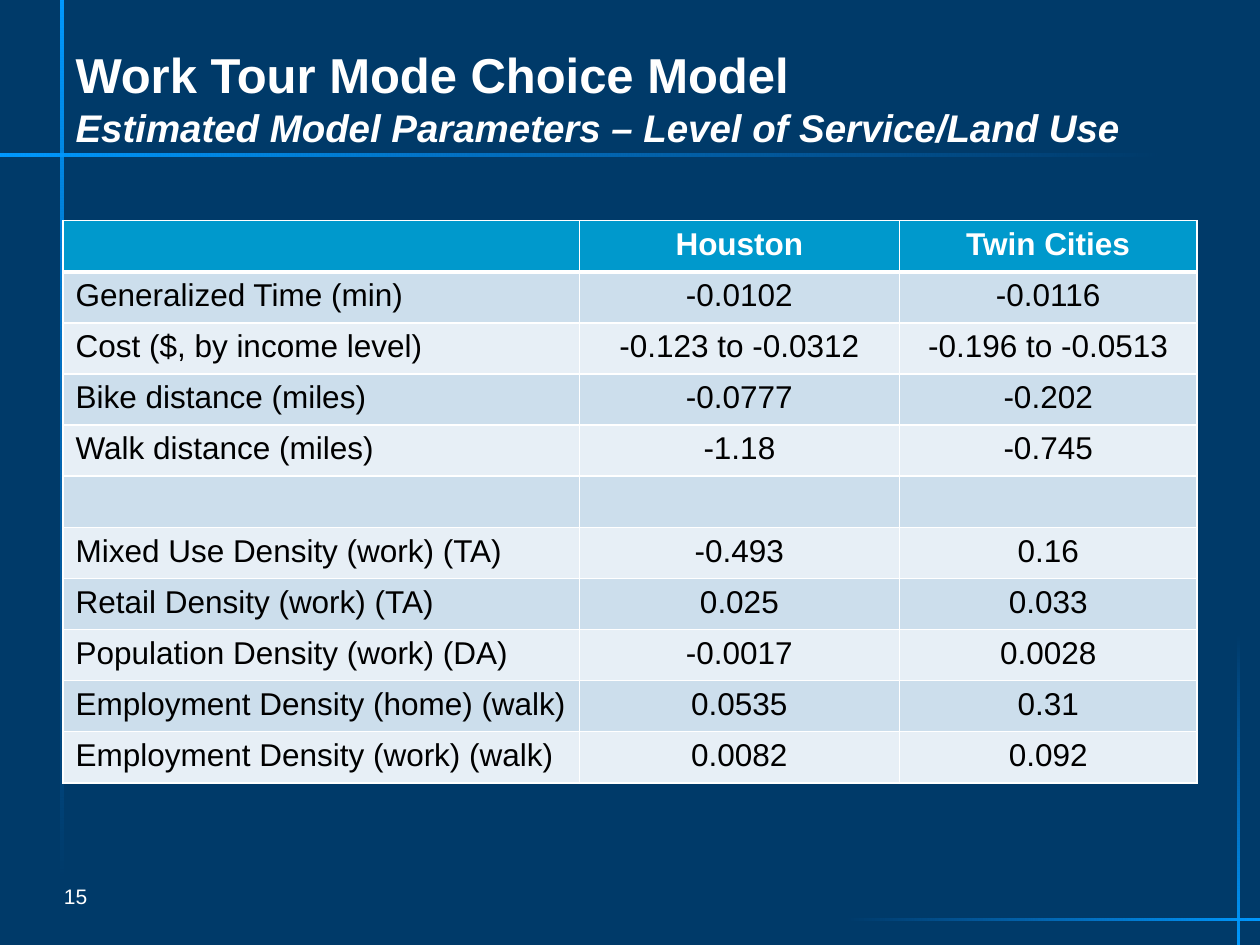
from lxml.etree import SubElement
from pptx import Presentation
from pptx.dml.color import RGBColor
from pptx.enum.shapes import MSO_SHAPE as Shape
from pptx.enum.text import MSO_ANCHOR as Anchor, MSO_AUTO_SIZE as AutoSize, PP_ALIGN as Align
from pptx.oxml import parse_xml
from pptx.oxml.ns import nsdecls, qn
from pptx.util import Cm, Pt

TITLE = "Work Tour Mode Choice Model"
SUBTITLE = "Estimated Model Parameters – Level of Service/Land Use"
PAGE = "15"
PARAMETERS = [
    ("", "Houston", "Twin Cities"),
    ("Generalized Time (min)", "-0.0102", "-0.0116"),
    ("Cost ($, by income level)", "-0.123 to -0.0312", "-0.196 to -0.0513"),
    ("Bike distance (miles)", "-0.0777", "-0.202"),
    ("Walk distance (miles)", "-1.18", "-0.745"),
    ("", "", ""),
    ("Mixed Use Density (work) (TA)", "-0.493", "0.16"),
    ("Retail Density (work) (TA)", "0.025", "0.033"),
    ("Population Density (work) (DA)", "-0.0017", "0.0028"),
    ("Employment Density (home) (walk)", "0.0535", "0.31"),
    ("Employment Density (work) (walk)", "0.0082", "0.092"),
]
COLUMN_WIDTHS = (10.41, 6.45, 6.0)
ROW_HEIGHT = 1.03
GUIDES = [
    (0, 3.09, 23.44, 0.07, 0),
    (1.22, 0, 0.06, 17.73, 90),
    (17.04, 18.51, 8.36, 0.04, 180),
    (24.94, 12.8, 0.04, 6.25, 270),
]
THEME = {
    "font": "Arial", "background": "003A69", "light": "FFFFFF", "dark": "000000",
    "header": "0099CC", "bands": ("CCDEEC", "E7EFF6"), "guide": ("0099FF", "0C92FF"),
    "title": 28, "subtitle": 22, "body": 18, "page": 12, "rule": 1, "header_rule": 3,
}


def add_text(paragraph, text, size, color=THEME["light"], bold=False, italic=False, align=Align.LEFT):
    paragraph.alignment = align
    run = paragraph.add_run()
    run.text = text
    run.font.name = THEME["font"]
    run.font.size = Pt(size)
    run.font.bold = bold
    run.font.italic = italic
    run.font.color.rgb = RGBColor.from_string(color)


def add_guide(slide, left, top, width, height, angle):
    guide = slide.shapes.add_shape(Shape.RECTANGLE, Cm(left), Cm(top), Cm(width), Cm(height))
    guide.shadow.inherit = False
    guide.line.fill.background()
    start, end = THEME["guide"]
    gradient = parse_xml(
        f'<a:gradFill {nsdecls("a")} rotWithShape="1"><a:gsLst>'
        f'<a:gs pos="0"><a:srgbClr val="{start}"/></a:gs>'
        f'<a:gs pos="100000"><a:srgbClr val="{end}"><a:alpha val="0"/></a:srgbClr></a:gs>'
        f'</a:gsLst><a:lin ang="{angle * 60000}" scaled="0"/></a:gradFill>')
    guide._element.spPr.find(qn("a:prstGeom")).addnext(gradient)


def add_borders(cell, **widths):
    properties = cell._tc.get_or_add_tcPr()
    for position, side in enumerate("LRTB"):
        line = SubElement(properties, qn(f"a:ln{side}"), w=str(Pt(widths.get(side, THEME["rule"]))))
        SubElement(SubElement(line, qn("a:solidFill")), qn("a:srgbClr"), val=THEME["light"])
        properties.insert(position, line)


def add_parameters(slide):
    frame = slide.shapes.add_table(
        len(PARAMETERS), len(COLUMN_WIDTHS), Cm(1.27), Cm(4.45),
        Cm(sum(COLUMN_WIDTHS)), Cm(ROW_HEIGHT * len(PARAMETERS)))
    table = frame.table
    for column, width in zip(table.columns, COLUMN_WIDTHS):
        column.width = Cm(width)
    for r, values in enumerate(PARAMETERS):
        table.rows[r].height = Cm(ROW_HEIGHT)
        header = r == 0
        background = THEME["header"] if header else THEME["bands"][(r - 1) % 2]
        edges = {0: {"B": THEME["header_rule"]}, 1: {"T": THEME["header_rule"]}}.get(r, {})
        for c, value in enumerate(values):
            cell = table.cell(r, c)
            cell.fill.solid()
            cell.fill.fore_color.rgb = RGBColor.from_string(background)
            add_borders(cell, **edges)
            if value:
                add_text(cell.text_frame.paragraphs[0], value, THEME["body"], bold=header,
                         color=THEME["light" if header else "dark"],
                         align=Align.CENTER if c else Align.LEFT)


def main():
    deck = Presentation()
    deck.slide_width, deck.slide_height = Cm(25.4), Cm(19.05)
    slide = deck.slides.add_slide(deck.slide_layouts[5])
    slide.background.fill.solid()
    slide.background.fill.fore_color.rgb = RGBColor.from_string(THEME["background"])

    for guide in GUIDES:
        add_guide(slide, *guide)

    title = slide.shapes.title
    title.left, title.top, title.width, title.height = Cm(1.27), Cm(0), Cm(23.57), Cm(3.15)
    title.text_frame.vertical_anchor = Anchor.BOTTOM
    title.text_frame.auto_size = AutoSize.NONE
    heading = title.text_frame.paragraphs[0]
    add_text(heading, TITLE, THEME["title"], bold=True)
    heading.add_line_break()
    add_text(heading, SUBTITLE, THEME["subtitle"], bold=True, italic=True)

    add_parameters(slide)

    page = slide.shapes.add_textbox(Cm(1.04), Cm(17.55), Cm(1.85), Cm(1.02)).text_frame
    page.word_wrap = True
    page.vertical_anchor = Anchor.MIDDLE
    add_text(page.paragraphs[0], PAGE, THEME["page"])

    deck.save("out.pptx")


if __name__ == "__main__":
    main()
